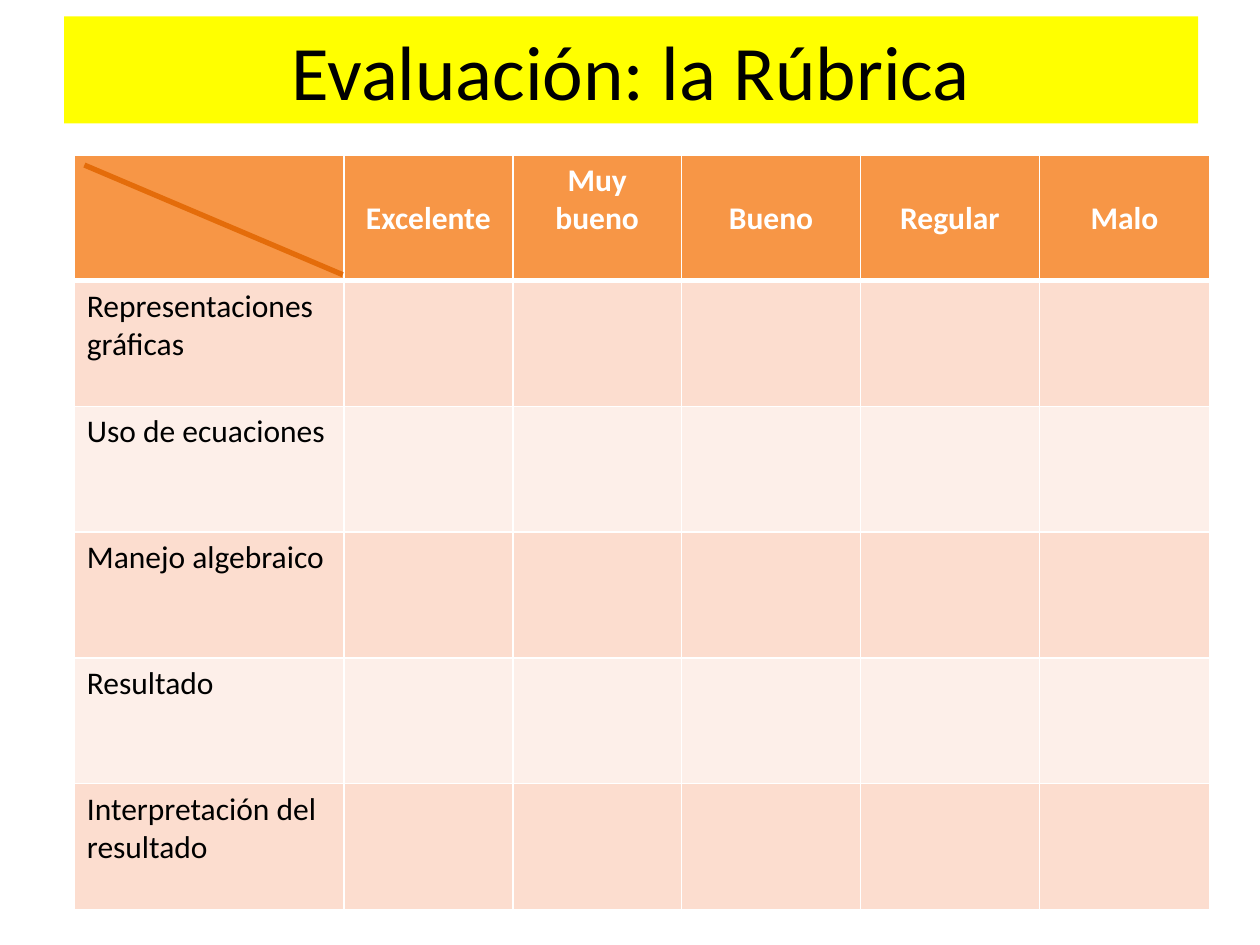
from pptx import Presentation
from pptx.dml.color import RGBColor as Rgb
from pptx.enum.shapes import MSO_CONNECTOR as Conn, MSO_SHAPE as Form
from pptx.enum.text import MSO_ANCHOR as Anchor, PP_ALIGN as Align
from pptx.oxml.ns import qn
from pptx.util import Inches, Pt
from lxml.etree import SubElement as Sub

GRADES = ["", "Excelente", "Muy bueno", "Bueno", "Regular", "Malo"]
TOPICS = ["Representaciones gráficas", "Uso de ecuaciones", "Manejo algebraico",
          "Resultado", "Interpretación del resultado"]
WIDTHS = [2.14, 1.34, 1.34, 1.42, 1.42, 1.35]
HEAD, BANDS = "F79646", ["FCDDCF", "FDEFE9"]


def paint(fill, color):
    """Give a fill one solid colour."""
    fill.solid()
    fill.fore_color.rgb = Rgb.from_string(color)


def write(frame, text, size, color, align, bold=False):
    """Set the text of a frame and format it."""
    frame.text = text
    para = frame.paragraphs[0]
    para.alignment = align
    for run in para.runs:
        font = run.font
        font.name, font.size, font.bold = "Calibri", Pt(size), bold
        font.color.rgb = Rgb.from_string(color)


def add_title(slide, text):
    """Add the yellow title bar."""
    bar = slide.shapes.add_shape(Form.RECTANGLE, Inches(0.51), Inches(0.13),
                                 Inches(9), Inches(0.85))
    bar.shadow.inherit = False
    paint(bar.fill, "FFFF00")
    bar.line.fill.background()
    bar.text_frame.word_wrap = True
    bar.text_frame.vertical_anchor = Anchor.MIDDLE
    write(bar.text_frame, text, 44, "000000", Align.CENTER)


def edge(cell, top, bottom):
    """Draw white borders around a cell."""
    props = cell._tc.get_or_add_tcPr()
    for side, width in zip("LRTB", [1, 1, top, bottom]):
        line = Sub(props, qn(f"a:ln{side}"), w=str(Pt(width)))
        Sub(Sub(line, qn("a:solidFill")), qn("a:srgbClr"), val="FFFFFF")


def add_grid(slide):
    """Add the rubric table with its header and banded rows."""
    rows = [GRADES] + [[topic] + [""] * (len(GRADES) - 1) for topic in TOPICS]
    grid = slide.shapes.add_table(len(rows), len(GRADES), Inches(0.59), Inches(1.23),
                                  Inches(sum(WIDTHS)), Inches(5.99)).table
    for col, width in zip(grid.columns, WIDTHS):
        col.width = Inches(width)
    for r, texts in enumerate(rows):
        for c, text in enumerate(texts):
            cell = grid.cell(r, c)
            edge(cell, 3 if r == 1 else 1, 3 if r == 0 else 1)
            if r == 0:
                paint(cell.fill, HEAD)
                write(cell.text_frame, text, 18, "FFFFFF", Align.CENTER, True)
                cell.margin_top = Inches(0.05 if " " in text else 0.35)
            else:
                paint(cell.fill, BANDS[(r - 1) % 2])
                write(cell.text_frame, text, 18, "000000", Align.LEFT)


def add_line(slide, start, end, color, width):
    """Add a straight line without shadow."""
    points = [Inches(value) for value in start + end]
    line = slide.shapes.add_connector(Conn.STRAIGHT, *points)
    line.line.color.rgb = Rgb.from_string(color)
    line.line.width = Pt(width)
    Sub(line._element.spPr, qn("a:effectLst"))


def main():
    """Build the slide and save it."""
    deck = Presentation()
    deck.slide_width, deck.slide_height = Inches(10), Inches(7.5)
    slide = deck.slides.add_slide(deck.slide_layouts[6])
    add_title(slide, "Evaluación: la Rúbrica")
    add_grid(slide)
    add_line(slide, (0.67, 1.31), (2.72, 2.18), "E46C0A", 3)
    deck.save("out.pptx")


if __name__ == "__main__":
    main()
